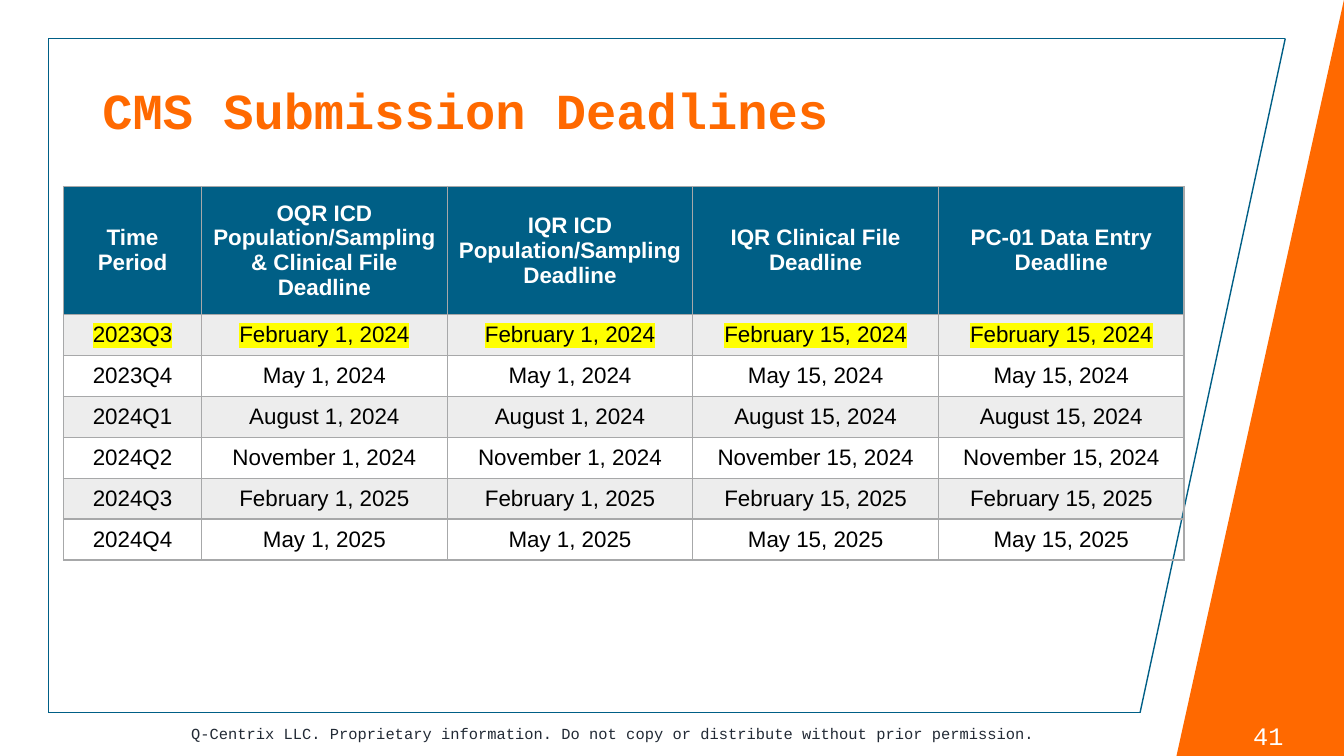
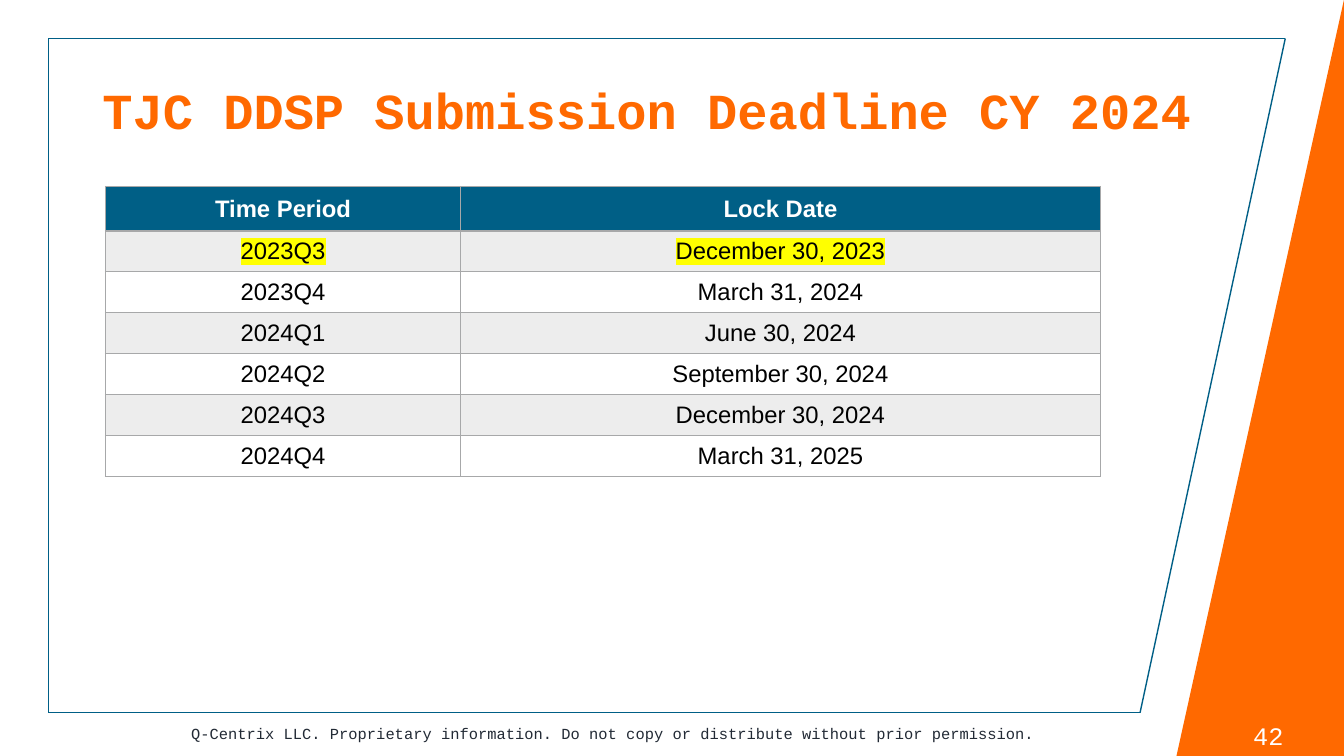
import itertools

import lxml.etree
import pptx
import pptx.dml.color
import pptx.enum.shapes
import pptx.enum.text
import pptx.oxml
import pptx.oxml.ns
import pptx.util

Cm = pptx.util.Cm
Pt = pptx.util.Pt
RGBColor = pptx.dml.color.RGBColor
ALIGN = pptx.enum.text.PP_ALIGN
ANCHOR = pptx.enum.text.MSO_ANCHOR
qn = pptx.oxml.ns.qn

ORANGE = RGBColor(0xFF, 0x69, 0x00)
BLUE = RGBColor(0x00, 0x5F, 0x86)
GREY = RGBColor(0xA7, 0xA8, 0xA9)
NAVY = RGBColor(0x22, 0x2A, 0x35)
WHITE = RGBColor(0xFF, 0xFF, 0xFF)
BLACK = RGBColor(0x00, 0x00, 0x00)
YELLOW = RGBColor(0xFF, 0xFF, 0x00)

DISPLAY_FONT = "Courier New"
TABLE_FONT = "Arial"
FOOTER = ("Q-Centrix LLC. Proprietary information. "
          "Do not copy or distribute without prior permission.")
FRAME_CORNERS = [(1.22, 0.97), (32.39, 0.97), (28.73, 17.96), (1.22, 17.96)]
TABLE_TOP = 4.7
ROW_HEIGHT = 1.03

PERIODS = ["2023Q3", "2023Q4", "2024Q1", "2024Q2", "2024Q3", "2024Q4"]
CMS_HEADINGS = [
    "Time Period",
    "OQR ICD Population/Sampling & Clinical File Deadline",
    "IQR ICD Population/Sampling Deadline",
    "IQR Clinical File Deadline",
    "PC-01 Data Entry Deadline",
]
CMS_DAYS = [1, 1, 15, 15]
CMS_MONTHS = [("February", 2024), ("May", 2024), ("August", 2024),
              ("November", 2024), ("February", 2025), ("May", 2025)]
LOCK_DATES = ["December 30, 2023", "March 31, 2024", "June 30, 2024",
              "September 30, 2024", "December 30, 2024", "March 31, 2025"]


class DeadlineDeck:
    def __init__(self):
        self.deck = pptx.Presentation()
        self.deck.slide_width = Cm(33.87)
        self.deck.slide_height = Cm(19.05)
        self.page = None

    def add_page(self, title, number):
        self.page = self.deck.slides.add_slide(self.deck.slide_layouts[6])
        self.wedge()
        for start, end in zip(FRAME_CORNERS, FRAME_CORNERS[1:] + FRAME_CORNERS[:1]):
            self.line(start, end)
        self.text(str(number), (31.04, 18.03, 1.85, 1.02), 18, WHITE,
                  anchor=ANCHOR.TOP)
        heading = self.text(title, (2.33, 1.02, 29.21, 3.68), 36, ORANGE,
                            align=ALIGN.LEFT, bold=True)
        heading.line_spacing = 0.9
        self.text(FOOTER, (1.85, 17.98, 27.2, 1.02), 11, NAVY)

    def wedge(self):
        shape = self.page.shapes.add_shape(
            pptx.enum.shapes.MSO_SHAPE.RIGHT_TRIANGLE,
            Cm(29.65), Cm(0), Cm(4.22), Cm(19.05))
        shape.shadow.inherit = False
        shape.fill.solid()
        shape.fill.fore_color.rgb = ORANGE
        shape.line.fill.background()
        shape.element.spPr.find(qn("a:xfrm")).set("flipH", "1")

    def line(self, start, end):
        connector = self.page.shapes.add_connector(
            pptx.enum.shapes.MSO_CONNECTOR.STRAIGHT,
            *[Cm(length) for length in start + end])
        connector.line.color.rgb = BLUE
        connector.line.width = Pt(1)
        lxml.etree.SubElement(connector.element.spPr, qn("a:effectLst"))

    def text(self, words, place, size, color, align=ALIGN.CENTER,
             anchor=ANCHOR.MIDDLE, bold=False):
        box = self.page.shapes.add_textbox(*[Cm(length) for length in place])
        frame = box.text_frame
        frame.word_wrap = True
        frame.vertical_anchor = anchor
        para = frame.paragraphs[0]
        para.add_run().text = words
        para.alignment = align
        self.style_font(para, DISPLAY_FONT, size, color, bold)
        return para

    def style_font(self, para, name, size, color, bold):
        para.font.name = name
        para.font.size = Pt(size)
        para.font.bold = bold
        para.font.color.rgb = color

    def table(self, rows, left, widths, header_height, size):
        heights = [header_height] + [ROW_HEIGHT] * (len(rows) - 1)
        table = self.page.shapes.add_table(
            len(rows), len(widths), Cm(left), Cm(TABLE_TOP),
            Cm(sum(widths)), Cm(sum(heights))).table
        table.first_row = False
        table.horz_banding = False
        for column, width in zip(table.columns, widths):
            column.width = Cm(width)
        for row, height in zip(table.rows, heights):
            row.height = Cm(height)
        for (index, words), column in itertools.product(
                enumerate(rows), range(len(widths))):
            self.cell(table.cell(index, column), words[column], index, size)

    def cell(self, cell, words, row_index, size):
        header = row_index == 0
        cell.vertical_anchor = ANCHOR.MIDDLE
        para = cell.text_frame.paragraphs[0]
        para.alignment = ALIGN.CENTER
        span = para.add_run()
        span.text = words
        self.style_font(para, TABLE_FONT, size, WHITE if header else BLACK, header)
        if row_index == 1:
            self.highlight(span)
        self.borders(cell)
        if header:
            cell.fill.solid()
            cell.fill.fore_color.rgb = BLUE
        elif row_index % 2:
            cell.fill.solid()
            cell.fill.fore_color.rgb = GREY
            tint = cell.fill._xPr.find(qn("a:solidFill"))[0]
            lxml.etree.SubElement(tint, qn("a:alpha"), val="20000")
        else:
            cell.fill.background()

    def highlight(self, span):
        marker = lxml.etree.SubElement(span.font._element, qn("a:highlight"))
        lxml.etree.SubElement(marker, qn("a:srgbClr"), val=str(YELLOW))

    def borders(self, cell):
        properties = cell._tc.get_or_add_tcPr()
        for side in ("a:lnL", "a:lnR", "a:lnT", "a:lnB"):
            border = lxml.etree.SubElement(properties, qn(side), w=str(Pt(1)))
            fill = lxml.etree.SubElement(border, qn("a:solidFill"))
            lxml.etree.SubElement(fill, qn("a:srgbClr"), val=str(GREY))


def main():
    style = DeadlineDeck()

    style.add_page("CMS Submission Deadlines", 41)
    cms_rows = [
        [period] + [f"{month} {day}, {year}" for day in CMS_DAYS]
        for period, (month, year) in zip(PERIODS, CMS_MONTHS)
    ]
    style.table([CMS_HEADINGS] + cms_rows, 1.6, [3.48] + [6.19] * 4, 3.23, 16)

    style.add_page("TJC DDSP Submission Deadline CY 2024", 42)
    lock_rows = list(zip(PERIODS, LOCK_DATES))
    style.table([("Time Period", "Lock Date")] + lock_rows,
                2.66, [8.95, 16.12], 1.12, 17)

    style.deck.save("out.pptx")


if __name__ == "__main__":
    main()
